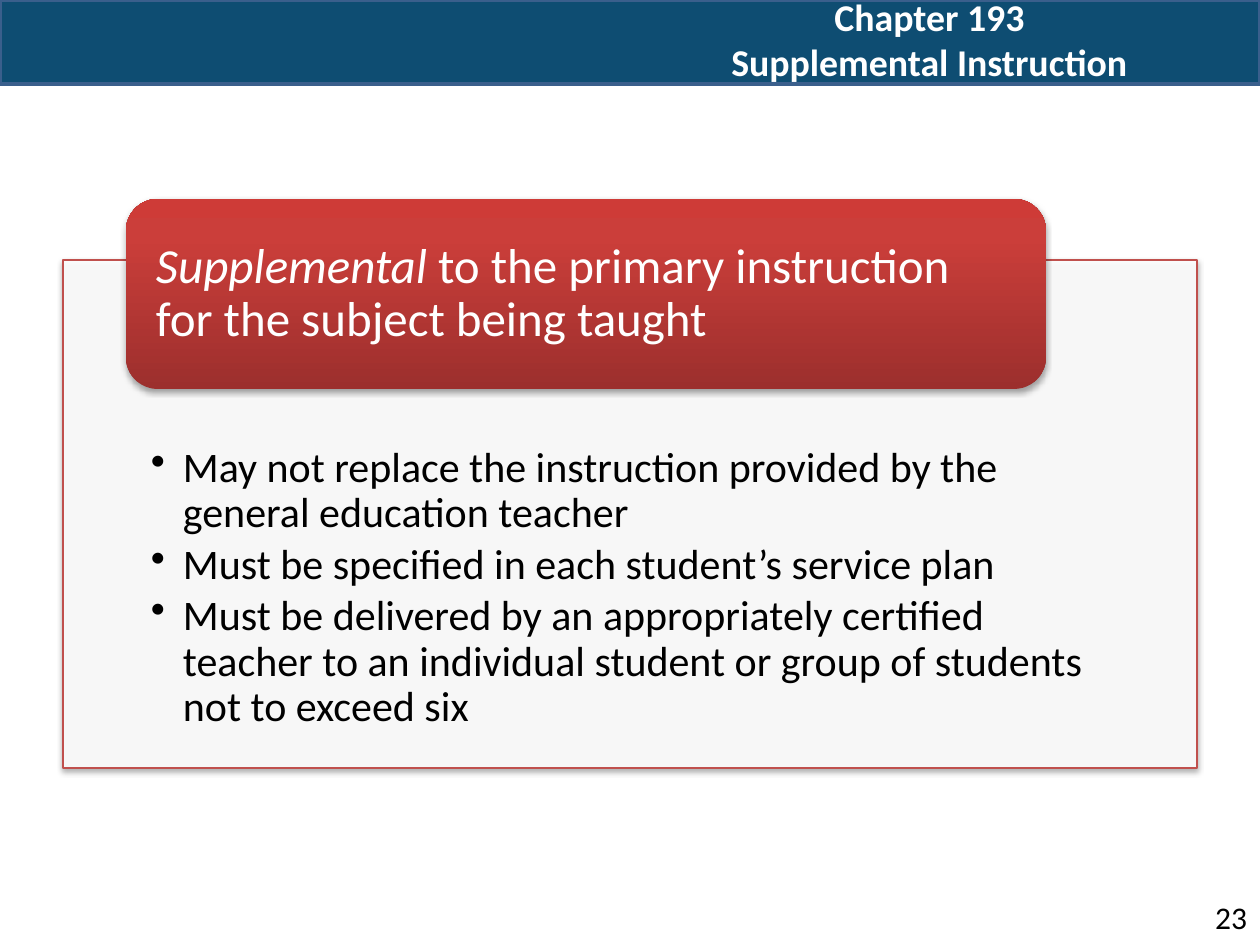
import copy
from dataclasses import dataclass
from typing import Any, NamedTuple

import pptx
import pptx.dml.color
import pptx.enum.shapes
import pptx.enum.text
import pptx.oxml
import pptx.oxml.ns
import pptx.util

RGBColor = pptx.dml.color.RGBColor
MSO_SHAPE = pptx.enum.shapes.MSO_SHAPE
PP_ALIGN = pptx.enum.text.PP_ALIGN
MSO_ANCHOR = pptx.enum.text.MSO_ANCHOR
qn = pptx.oxml.ns.qn

WHITE = RGBColor(0xFF, 0xFF, 0xFF)
BLACK = RGBColor(0x00, 0x00, 0x00)
NAVY = RGBColor(0x0E, 0x4D, 0x72)
STEEL = RGBColor(0x3A, 0x5F, 0x8C)
RED = RGBColor(0xC0, 0x50, 0x4D)
HEADING_STOPS = (
    (0, RGBColor(0x9C, 0x2F, 0x2D)),
    (0.8, RGBColor(0xCB, 0x3E, 0x3A)),
    (1, RGBColor(0xCE, 0x3B, 0x37)),
)
FONT = "Calibri"
PIXELS_PER_INCH = 126
BULLET_INDENT = 32


class Box(NamedTuple):
    left: int
    top: int
    width: int
    height: int


class Insets(NamedTuple):
    left: int = 13
    top: int = 6
    right: int = 13
    bottom: int = 6


class TextRun(NamedTuple):
    text: str
    bold: bool = False
    italic: bool = False


@dataclass(frozen=True)
class TextBlock:
    box: Box
    paragraphs: list[list[TextRun]]
    size: float
    color: RGBColor
    insets: Insets = Insets()
    alignment: Any = PP_ALIGN.LEFT
    anchor: Any = MSO_ANCHOR.TOP
    line_spacing: float = 1.0
    space_after: float = 0
    bulleted: bool = False


SLIDE = Box(0, 0, 1260, 945)
HEADER = Box(0, 0, 1260, 84)
PANEL = Box(63, 260, 1134, 508)
HEADING = Box(126, 199, 920, 190)

TEXT_BLOCKS = {
    "page": TextBlock(
        Box(1176, 892, 84, 50), [[TextRun("23")]], 18, BLACK, alignment=PP_ALIGN.RIGHT
    ),
    "title": TextBlock(
        Box(599, 0, 661, 78),
        [[TextRun("Chapter 193\vSupplemental Instruction", bold=True)]],
        21.6, WHITE, alignment=PP_ALIGN.CENTER, anchor=MSO_ANCHOR.MIDDLE,
    ),
    "requirements": TextBlock(
        PANEL,
        [
            [TextRun("May not replace the instruction provided by the general education teacher")],
            [TextRun("Must be specified in each student’s service plan")],
            [TextRun(
                "Must be delivered by an appropriately certified teacher to an "
                "individual student or group of students not to exceed six"
            )],
        ],
        24, BLACK, Insets(88, 186, 88, 24), line_spacing=0.9, space_after=3.6, bulleted=True,
    ),
    "heading": TextBlock(
        HEADING,
        [[
            TextRun("Supplemental", italic=True),
            TextRun(" to the primary instruction for the subject being taught"),
        ]],
        28, WHITE, Insets(30, 0, 30, 0), anchor=MSO_ANCHOR.MIDDLE, line_spacing=0.9,
    ),
}


def px(length: int) -> pptx.util.Emu:
    return pptx.util.Emu(round(length * 914400 / PIXELS_PER_INCH))


def add_shape(slide: Any, kind: Any, box: Box) -> Any:
    shape = slide.shapes.add_shape(kind, *map(px, box))
    shape.shadow.inherit = False
    return shape


def set_solid(shape: Any, fill: RGBColor, line: RGBColor, line_width: float) -> None:
    shape.fill.solid()
    shape.fill.fore_color.rgb = fill
    shape.line.color.rgb = line
    shape.line.width = pptx.util.Pt(line_width)


def set_opacity(shape: Any, percent: int) -> None:
    color = shape.element.spPr.find(f"{qn('a:solidFill')}/{qn('a:srgbClr')}")
    color.append(pptx.oxml.parse_xml(
        f'<a:alpha {pptx.oxml.ns.nsdecls("a")} val="{percent * 1000}"/>'
    ))


def set_heading_gradient(shape: Any) -> None:
    shape.fill.gradient()
    shape.fill.gradient_angle = 90
    stop_list = shape.element.spPr.find(f"{qn('a:gradFill')}/{qn('a:gsLst')}")
    stop_list.append(copy.deepcopy(stop_list[-1]))
    for stop, (position, color) in zip(shape.fill.gradient_stops, HEADING_STOPS):
        stop.position = position
        stop.color.rgb = color


def add_shadow(shape: Any) -> None:
    effects = shape.element.spPr.find(qn("a:effectLst"))
    effects.append(pptx.oxml.parse_xml(
        f'<a:outerShdw {pptx.oxml.ns.nsdecls("a")} blurRad="40000" dist="23000" '
        'dir="5400000" rotWithShape="0"><a:srgbClr val="000000">'
        '<a:alpha val="35000"/></a:srgbClr></a:outerShdw>'
    ))


def add_bullet(paragraph: Any) -> None:
    paragraph.level = 1
    properties = paragraph._p.get_or_add_pPr()
    properties.set("marL", str(px(BULLET_INDENT)))
    properties.set("indent", str(-px(BULLET_INDENT)))
    properties.append(pptx.oxml.parse_xml(
        f'<a:buChar {pptx.oxml.ns.nsdecls("a")} char="•"/>'
    ))


def add_run(paragraph: Any, text_run: TextRun, block: TextBlock) -> None:
    for index, line in enumerate(text_run.text.split("\v")):
        if index:
            paragraph.add_line_break()
        run = paragraph.add_run()
        run.text = line
        run.font.name = FONT
        run.font.size = pptx.util.Pt(block.size)
        run.font.color.rgb = block.color
        run.font.bold = text_run.bold
        run.font.italic = text_run.italic


def add_text(slide: Any, block: TextBlock) -> None:
    frame = slide.shapes.add_textbox(*map(px, block.box)).text_frame
    frame.word_wrap = True
    frame.vertical_anchor = block.anchor
    for side, inset in block.insets._asdict().items():
        setattr(frame, f"margin_{side}", px(inset))
    for index, text_runs in enumerate(block.paragraphs):
        paragraph = frame.add_paragraph() if index else frame.paragraphs[0]
        if block.bulleted:
            add_bullet(paragraph)
        paragraph.alignment = block.alignment
        paragraph.line_spacing = block.line_spacing
        paragraph.space_after = pptx.util.Pt(block.space_after)
        for text_run in text_runs:
            add_run(paragraph, text_run, block)


def main() -> None:
    presentation = pptx.Presentation()
    presentation.slide_width = px(SLIDE.width)
    presentation.slide_height = px(SLIDE.height)
    slide = presentation.slides.add_slide(presentation.slide_layouts[6])

    set_solid(add_shape(slide, MSO_SHAPE.RECTANGLE, HEADER), NAVY, STEEL, 2)
    add_text(slide, TEXT_BLOCKS["page"])
    add_text(slide, TEXT_BLOCKS["title"])

    panel = add_shape(slide, MSO_SHAPE.RECTANGLE, PANEL)
    set_solid(panel, WHITE, RED, 0.75)
    set_opacity(panel, 90)
    add_shadow(panel)
    add_text(slide, TEXT_BLOCKS["requirements"])

    heading = add_shape(slide, MSO_SHAPE.ROUNDED_RECTANGLE, HEADING)
    set_heading_gradient(heading)
    heading.line.fill.background()
    add_shadow(heading)
    add_text(slide, TEXT_BLOCKS["heading"])
    presentation.save("out.pptx")


if __name__ == "__main__":
    main()
